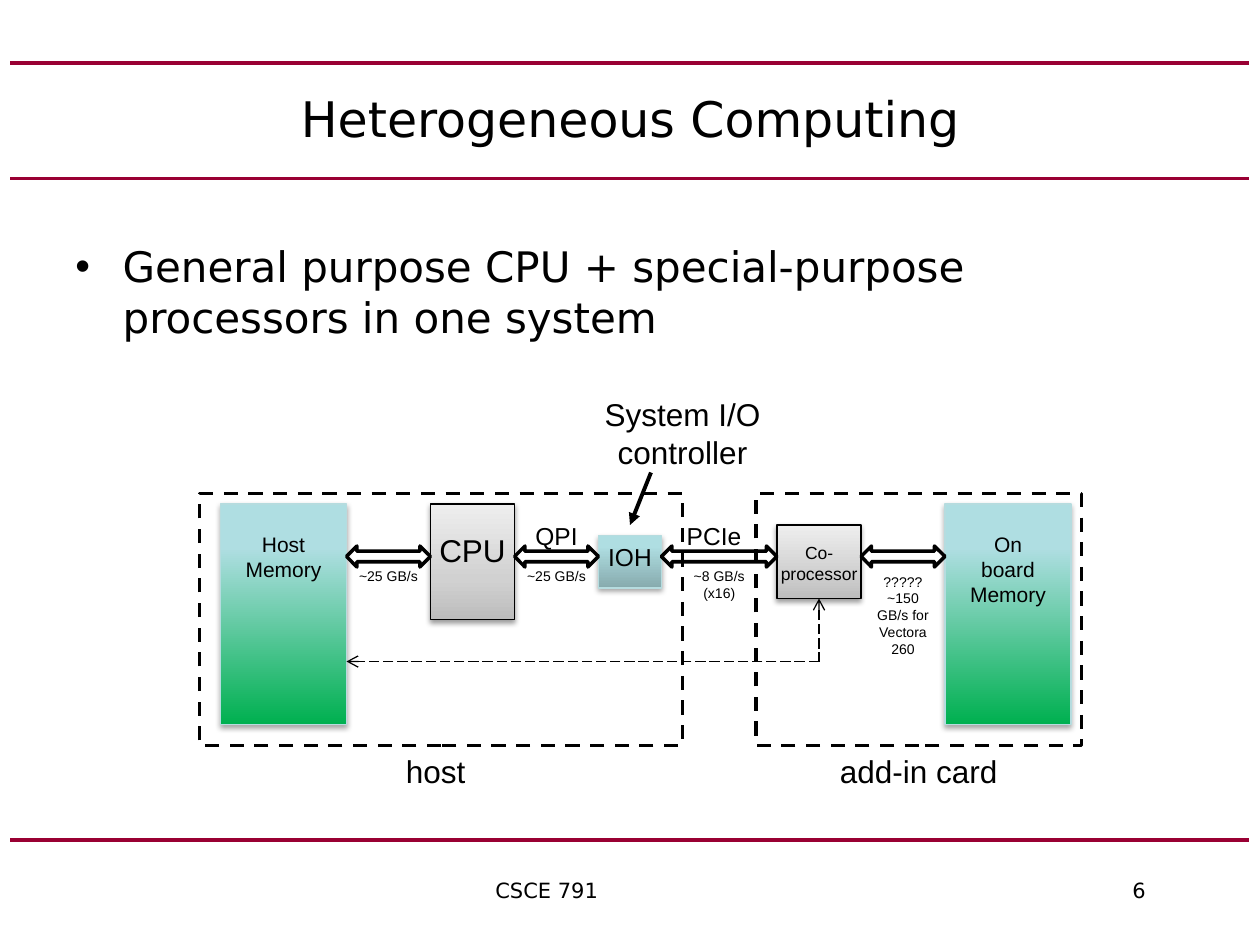
from dataclasses import dataclass

from lxml.etree import SubElement
from pptx import Presentation
from pptx.dml.color import RGBColor
from pptx.enum.dml import MSO_LINE as Dash
from pptx.enum.shapes import MSO_CONNECTOR as Connector, MSO_SHAPE as Shape
from pptx.enum.text import MSO_ANCHOR as Anchor, PP_ALIGN as Align
from pptx.oxml.ns import qn
from pptx.util import Pt


@dataclass(frozen=True)
class Theme:
    ink: str = "000000"
    rule: str = "990033"
    head_font: str = "DejaVu Sans"
    label_font: str = "Arial"
    title: int = 28
    body: int = 24
    large: int = 18
    medium: int = 14
    small: int = 12
    tight: int = 10
    tiny: int = 8


theme = Theme()

# Gradients run from the bottom up: (stop %, colour), border, shadow opacity %
GREY = ([(0, "BDBDBD"), (35, "D1D1D1"), (100, "EEEEEE")], "000000", 38)
TEAL = ([(0, "87ABAE"), (80, "AFDEE2"), (100, "AFE0E4")], "B6DCDF", 35)
GREEN = ([(0, "00B050"), (80, "AFDEE2"), (100, "AFE0E4")], "B6DCDF", 35)

# Content, in points
TITLE = "Heterogeneous Computing"
BULLET = "General purpose CPU + special-purpose processors in one system"
FOOTER = "\tCSCE 791\t6"
FOOTER_TABS = (72, 436)
RULES = (36, 102, 480)

# Bus components, left to right: left, top, width, height, style,
# label, label top, label size
COMPONENTS = [
    (126, 288, 72, 126, GREEN, "Host Memory", 300, theme.small),
    (246, 288, 48, 66, GREY, "CPU", 300, theme.large),
    (342, 306, 36, 30, TEAL, "IOH", 306, theme.medium),
    (444, 300, 48, 42, GREY, "Co-processor", 306, theme.tight),
    (540, 288, 72, 126, GREEN, "On board\nMemory", 300, theme.small),
]
LABEL_WIDTHS = (60, 60, 48, 60, 60)

# One entry for each gap between components: bus name, bandwidth, its top
BUSES = [
    (None, "~25 GB/s", 320.5),
    ("QPI", "~25 GB/s", 321),
    ("PCIe", "~8 GB/s (x16)", 321),
    (None, "?????\n~150 GB/s for Vectora 260", 324),
]
BUS_TOP, BUS_HEIGHT, BUS_LABEL_WIDTH = 312, 12, 48

# Enclosures: left, width, caption, caption left
ENCLOSURES = [(432, 186, "add-in card", 468), (114, 276, "host", 192)]
ENCLOSURE_TOP, ENCLOSURE_HEIGHT, CAPTION_WIDTH = 282, 144, 114

# Lines: start, end, width, dash, end carrying the arrowhead, arrowhead
POINTERS = [
    ((468, 342), (468, 378), 0.75, Dash.LONG_DASH, "headEnd", "arrow"),
    ((468, 378), (198, 378), 0.75, Dash.LONG_DASH, "tailEnd", "arrow"),
    ((372, 270), (360, 300), 2.25, None, "tailEnd", "triangle"),
]

deck = Presentation()
deck.slide_width, deck.slide_height = Pt(720), Pt(540)
page = deck.slides.add_slide(deck.slide_layouts[6])


def style_line(line, color, width, dash=None):
    line.color.rgb = RGBColor.from_string(color)
    line.width = Pt(width)
    if dash is not None:
        line.dash_style = dash


def add_text(text, left, top, width, height, size, font=theme.label_font,
             align=Align.CENTER, anchor=Anchor.TOP, inset=7.2):
    box = page.shapes.add_textbox(Pt(left), Pt(top), Pt(width), Pt(height))
    frame = box.text_frame
    frame.word_wrap = True
    frame.vertical_anchor = anchor
    frame.margin_left = frame.margin_right = Pt(inset)
    frame.text = text
    for para in frame.paragraphs:
        para.alignment = align
        for span in para.runs:
            span.font.size = Pt(size)
            span.font.name = font
            span.font.color.rgb = RGBColor.from_string(theme.ink)
    return frame.paragraphs[0]


def add_line(start, end, color, width, dash=None):
    line = page.shapes.add_connector(
        Connector.STRAIGHT, *(Pt(value) for value in start + end))
    style_line(line.line, color, width, dash)
    SubElement(line._element.spPr, qn("a:effectLst"))
    return line


def add_shape(kind, left, top, width, height, color, weight, dash=None):
    shape = page.shapes.add_shape(
        kind, Pt(left), Pt(top), Pt(width), Pt(height))
    shape.fill.background()
    style_line(shape.line, color, weight, dash)
    shape.shadow.inherit = False
    return shape


def add_color(parent, color, alpha=None):
    node = SubElement(parent, qn("a:srgbClr"), val=color)
    if alpha is not None:
        SubElement(node, qn("a:alpha"), val=str(alpha * 1000))


def add_component(left, top, width, height, style):
    stops, border, opacity = style
    shape = add_shape(Shape.RECTANGLE, left, top, width, height, border, 0.75)
    shape.fill.gradient()
    shape.fill.gradient_angle = 90
    stop_list = shape._element.spPr.find(qn("a:gradFill")).find(qn("a:gsLst"))
    for old in list(stop_list):
        stop_list.remove(old)
    for position, color in stops:
        add_color(SubElement(stop_list, qn("a:gs"), pos=str(position * 1000)), color)
    effects = shape._element.spPr.find(qn("a:effectLst"))
    shadow = SubElement(effects, qn("a:outerShdw"), blurRad=str(Pt(3.1)),
                        dist=str(Pt(1.7)), dir="5400000", rotWithShape="0")
    add_color(shadow, theme.ink, opacity)


# Rules and title
for y in RULES:
    add_line((6, y), (714, y), theme.rule, 2.25)
add_text(TITLE, 36, 36, 648, 63, theme.title, theme.head_font, anchor=Anchor.MIDDLE)

# Bulleted statement
para = add_text(BULLET, 36, 134, 648, 66, theme.body, theme.head_font, Align.LEFT)
properties = para._p.get_or_add_pPr()
properties.set("marL", str(Pt(27)))
properties.set("indent", str(Pt(-27)))
SubElement(properties, qn("a:buFont"), typeface=theme.label_font)
SubElement(properties, qn("a:buChar"), char="•")

# Components with centred labels
for (left, top, width, height, style, label, label_top, size), label_width in zip(
        COMPONENTS, LABEL_WIDTHS):
    add_component(left, top, width, height, style)
    add_text(label, left + (width - label_width) / 2, label_top,
             label_width, 30, size)

# Buses fill the gaps between neighbouring components
for before, after, (name, rate, rate_top) in zip(COMPONENTS, COMPONENTS[1:], BUSES):
    start, end = before[0] + before[2], after[0]
    add_shape(Shape.LEFT_RIGHT_ARROW, start, BUS_TOP, end - start, BUS_HEIGHT,
              theme.ink, 2)
    label_left = (start + end - BUS_LABEL_WIDTH) / 2
    if name:
        name_left = min(label_left, start + 6)
        add_text(name, name_left, 294, BUS_LABEL_WIDTH, 24, theme.medium)
    add_text(rate, label_left, rate_top, BUS_LABEL_WIDTH, 26, theme.tiny, inset=6)

# Dashed enclosures and captions
for left, width, caption, caption_left in ENCLOSURES:
    add_shape(Shape.RECTANGLE, left, ENCLOSURE_TOP, width, ENCLOSURE_HEIGHT,
              theme.ink, 2, Dash.DASH)
    add_text(caption, caption_left, ENCLOSURE_TOP + ENCLOSURE_HEIGHT,
             CAPTION_WIDTH, 29, theme.large)

# Controller callout and pointers
add_text("System I/O controller", 324, 222, 132, 51, theme.large)
for start, end, width, dash, side, head in POINTERS:
    line = add_line(start, end, theme.ink, width, dash)
    SubElement(line.line._get_or_add_ln(), qn("a:" + side), type=head)

# Footer with tab stops
para = add_text(FOOTER, 204, 498, 504, 24, theme.small, theme.head_font, Align.LEFT)
tabs = SubElement(para._p.get_or_add_pPr(), qn("a:tabLst"))
for position in FOOTER_TABS:
    SubElement(tabs, qn("a:tab"), pos=str(Pt(position)), algn="l")

deck.save("out.pptx")
